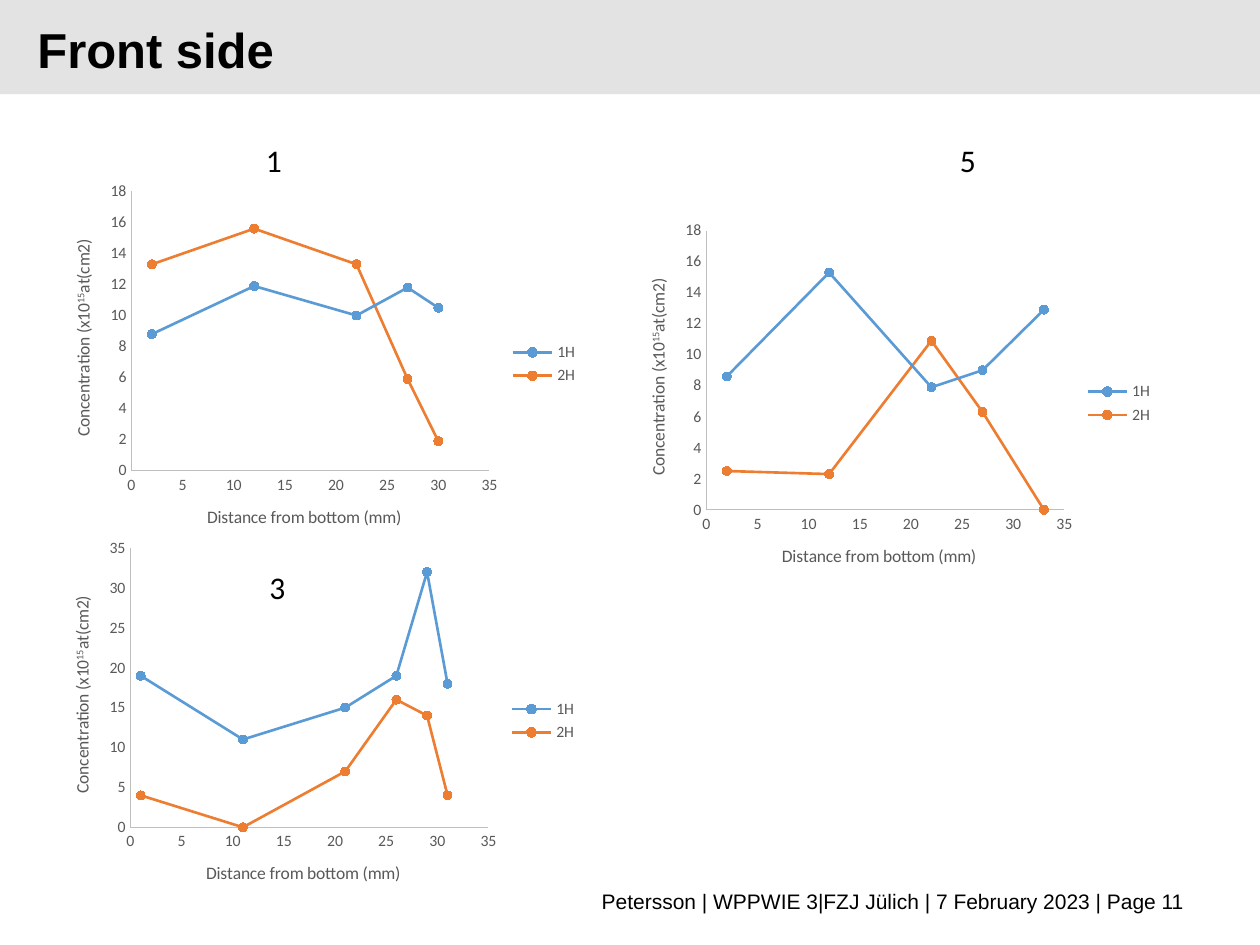
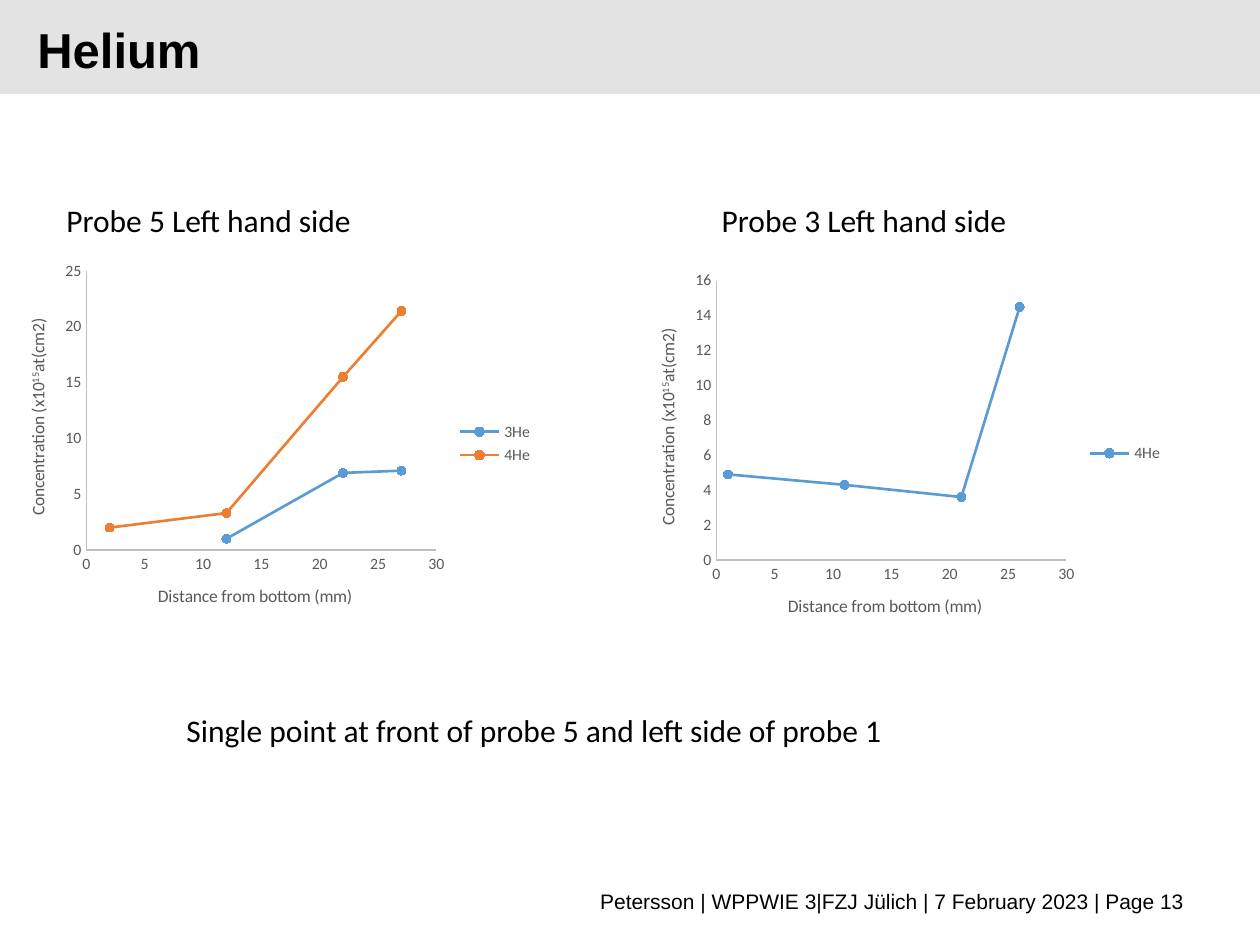
from dataclasses import dataclass

from lxml import etree
from pptx import Presentation
from pptx.chart.data import XyChartData
from pptx.dml.color import RGBColor
from pptx.enum.chart import (XL_CHART_TYPE, XL_LEGEND_POSITION,
                             XL_MARKER_STYLE, XL_TICK_MARK)
from pptx.enum.shapes import MSO_SHAPE
from pptx.enum.text import MSO_ANCHOR, MSO_AUTO_SIZE, PP_ALIGN
from pptx.oxml.ns import qn
from pptx.util import Cm, Pt

SCATTER = XL_CHART_TYPE.XY_SCATTER_LINES
LEGEND_RIGHT = XL_LEGEND_POSITION.RIGHT
CIRCLE = XL_MARKER_STYLE.CIRCLE
NO_TICK = XL_TICK_MARK.NONE
RECT = MSO_SHAPE.RECTANGLE
TOP, MIDDLE = MSO_ANCHOR.TOP, MSO_ANCHOR.MIDDLE
LEFT, RIGHT = PP_ALIGN.LEFT, PP_ALIGN.RIGHT
NO_FIT = MSO_AUTO_SIZE.NONE
GROW = MSO_AUTO_SIZE.SHAPE_TO_FIT_TEXT


@dataclass(frozen=True)
class Theme:
    head_font: str = "Arial"
    body_font: str = "Calibri"
    text: str = "000000"
    band: str = "E3E3E3"
    axis_text: str = "595959"
    axis_line: str = "BFBFBF"
    series: tuple = ("5B9BD5", "ED7D31")
    title_size: int = 28
    label_size: int = 18
    footer_size: int = 12
    axis_title_size: int = 10
    tick_size: int = 9


FOOTER = "Petersson | WPPWIE 3|FZJ Jülich | 7 February 2023 | Page {}"
X_TITLE = ["Distance from bottom (mm)"]
Y_TITLE = ["Concentration (x10", "15", "at(cm2)"]  # second run is raised

# Chart size and plot area within it, in centimetres
CHART_W, CHART_H = 11, 7.62
PLOT_X, PLOT_Y, PLOT_H = 1.74, 0.33, 5.63


def set_layout(parent, index, x, y, w=None, h=None):
    """Place a chart part; lengths are centimetres inside the chart."""
    for old in parent.findall(qn("c:layout")):
        parent.remove(old)
    layout = etree.Element(qn("c:layout"))
    manual = etree.SubElement(layout, qn("c:manualLayout"))
    values = {"layoutTarget": "inner"} if w else {}
    values.update(xMode="edge", yMode="edge", x=x / CHART_W, y=y / CHART_H)
    if w:
        values.update(w=w / CHART_W, h=h / CHART_H)
    for tag, value in values.items():
        etree.SubElement(manual, qn("c:" + tag)).set("val", str(value))
    parent.insert(index, layout)


class Deck:
    def __init__(self, theme):
        self.theme = theme
        self.prs = Presentation()
        self.prs.slide_width, self.prs.slide_height = Cm(25.4), Cm(19.05)
        self.s = None

    def style(self, font, size, color, name, bold=False):
        font.size, font.name, font.bold = Pt(size), name, bold
        font.color.rgb = RGBColor.from_string(color)

    def slide(self, title, page):
        """Start a slide with its band, title and footer."""
        t = self.theme
        self.s = self.prs.slides.add_slide(self.prs.slide_layouts[5])
        band = self.s.shapes.add_shape(RECT, 0, 0, Cm(25.4), Cm(1.9))
        band.shadow.inherit = False
        band.fill.solid()
        band.fill.fore_color.rgb = RGBColor.from_string(t.band)
        band.line.fill.background()
        band.element.getparent().insert(2, band.element)  # behind the title

        sp = self.s.shapes.title
        sp.left, sp.top, sp.width, sp.height = Cm(0.5), Cm(0.4), Cm(21.89), Cm(1.12)
        tf = sp.text_frame
        tf.text = title
        tf.auto_size, tf.vertical_anchor = NO_FIT, TOP
        p = tf.paragraphs[0]
        p.alignment, p.line_spacing = LEFT, 0.9
        self.style(p.runs[0].font, t.title_size, t.text, t.head_font, True)

        tf = self.text(FOOTER.format(page), 6.91, 17.65, 17.22,
                       t.footer_size, t.head_font)
        tf.word_wrap, tf.auto_size, tf.vertical_anchor = True, NO_FIT, MIDDLE
        tf.paragraphs[0].alignment = RIGHT

    def text(self, words, x, y, w, size, font):
        sp = self.s.shapes.add_textbox(Cm(x), Cm(y), Cm(w), Cm(1.02))
        tf = sp.text_frame
        tf.text = words
        tf.word_wrap, tf.auto_size = False, GROW
        self.style(tf.paragraphs[0].runs[0].font, size, self.theme.text, font)
        return tf

    def label(self, words, x, y, w=0.84):
        self.text(words, x, y, w, self.theme.label_size, self.theme.body_font)

    def axis(self, axis, title, maximum, step, x, y, rotation):
        t = self.theme
        axis.minimum_scale, axis.maximum_scale = 0, maximum
        axis.major_unit = step
        axis.has_major_gridlines = False
        axis.major_tick_mark = axis.minor_tick_mark = NO_TICK
        axis.format.line.color.rgb = RGBColor.from_string(t.axis_line)
        axis.format.line.width = Pt(0.75)
        self.style(axis.tick_labels.font, t.tick_size, t.axis_text, t.body_font)
        p = axis.axis_title.text_frame.paragraphs[0]
        for i, words in enumerate(title):
            r = p.add_run()
            r.text = words
            self.style(r.font, t.axis_title_size, t.axis_text, t.body_font)
            if i == 1:
                r.font._element.set("baseline", "30000")
        body = axis.axis_title.element.find(".//" + qn("a:bodyPr"))
        body.set("rot", str(rotation))
        body.set("vert", "horz")
        set_layout(axis.axis_title.element, 1, x, y)

    def chart(self, x, y, distances, series, x_max, y_max, y_step, plot_w):
        t = self.theme
        data = XyChartData()
        for name, values in series.items():
            line = data.add_series(name)
            for distance, value in zip(distances, values):
                line.add_data_point(distance, value)
        chart = self.s.shapes.add_chart(SCATTER, Cm(x), Cm(y), Cm(CHART_W),
                                        Cm(CHART_H), data).chart
        # A missing value keeps its place but has no point
        for pt in list(chart.element.iter(qn("c:pt"))):
            if pt.findtext(qn("c:v")) in ("None", "", None):
                pt.getparent().remove(pt)
        chart.has_title = False
        self.style(chart.font, t.axis_title_size, t.text, t.body_font)
        chart.has_legend = True
        chart.legend.position = LEGEND_RIGHT
        chart.legend.include_in_layout = False
        self.style(chart.legend.font, t.tick_size, t.axis_text, t.body_font)

        # Plot area and axes
        set_layout(chart.element.find(".//" + qn("c:plotArea")), 0,
                   PLOT_X, PLOT_Y, plot_w, PLOT_H)
        title_x = PLOT_X + plot_w / 2 - 2.15
        self.axis(chart.category_axis, X_TITLE, x_max, 5, title_x, 6.59, 0)
        self.axis(chart.value_axis, Y_TITLE, y_max, y_step, 0.45, 1.22, -5400000)

        # Lines and markers
        plot = chart.plots[0]
        plot.vary_by_categories = False
        for line, color in zip(plot.series, t.series):
            rgb = RGBColor.from_string(color)
            line.smooth = False
            line.format.line.color.rgb = rgb
            line.format.line.width = Pt(1.5)
            line.marker.style, line.marker.size = CIRCLE, 5
            line.marker.format.fill.solid()
            line.marker.format.fill.fore_color.rgb = rgb
            line.marker.format.line.color.rgb = rgb


def front_side(deck):
    deck.slide("Front side", 11)
    deck.chart(12.5, 4.32, [33, 27, 22, 12, 2],
               {"1H": [12.9, 9, 7.9, 15.3, 8.6],
                "2H": [0, 6.3, 10.9, 2.3, 2.5]}, 35, 18, 2, 7.22)
    deck.chart(0.89, 10.72, [31, 29, 26, 21, 11, 1],
               {"1H": [18, 32, 19, 15, 11, 19],
                "2H": [4, 14, 16, 7, 0, 4]}, 35, 35, 5, 7.22)
    deck.chart(0.91, 3.53, [30, 27, 22, 12, 2],
               {"1H": [10.5, 11.8, 10, 11.9, 8.8],
                "2H": [1.9, 5.9, 13.3, 15.6, 13.3]}, 35, 18, 2, 7.22)
    deck.label("1", 5.11, 2.72)
    deck.label("5", 19.1, 2.72)
    deck.label("3", 5.18, 11.33)


def helium(deck):
    deck.slide("Helium", 13)
    deck.chart(0, 5.13, [27, 22, 12, 2],
               {"3He": [7.1, 6.9, 1, None],
                "4He": [21.4, 15.5, 3.3, 2]}, 30, 25, 5, 7.06)
    deck.label("Probe 5 Left hand side", 1.09, 3.92, 6.48)
    deck.chart(12.7, 5.33, [26, 21, 11, 1],
               {"4He": [14.5, 3.6, 4.3, 4.9]}, 30, 16, 2, 7.06)
    deck.label("Probe 3 Left hand side", 14.3, 3.92, 6.48)
    deck.label("Single point at front of probe 5 and left side of probe 1",
               3.51, 14.2, 14.88)


def main():
    deck = Deck(Theme())
    front_side(deck)
    helium(deck)
    deck.prs.save("out.pptx")


if __name__ == "__main__":
    main()
